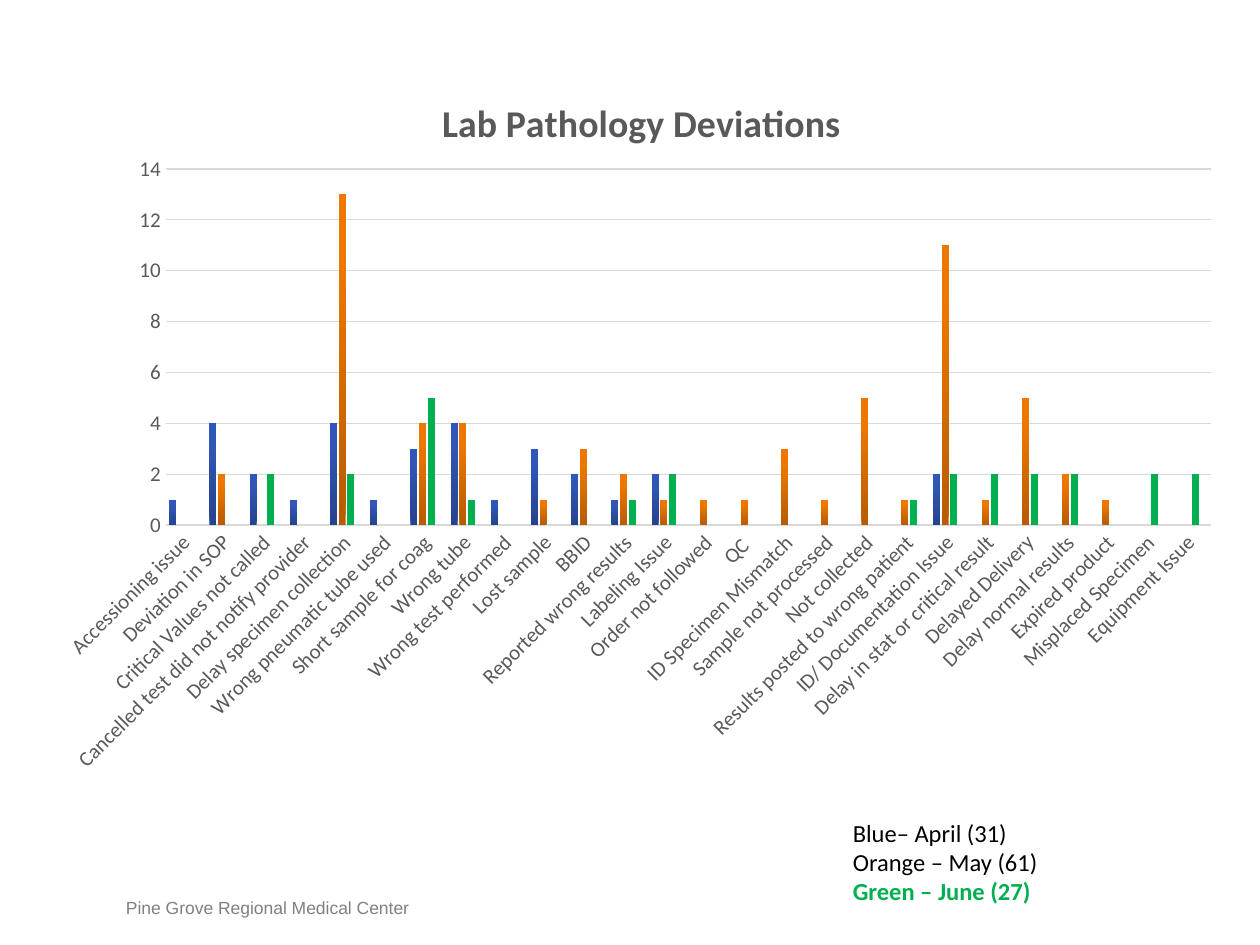
from pptx import Presentation
from pptx.chart.data import CategoryChartData
from pptx.dml.color import RGBColor
from pptx.enum import chart as ch, text
from pptx.oxml import parse_xml
from pptx.oxml.ns import nsdecls, qn
from pptx.util import Inches, Pt

COLORS = {"black": "000000", "green": "00B050", "footer": "808080",
          "label": "595959", "grid": "D9D9D9"}
TITLE = "Lab Pathology Deviations"
FOOTER = "Pine Grove Regional Medical Center"
KEY = [("Blue– April (31)", "black", False),
       ("Orange – May (61)", "black", False),
       ("Green – June (27)", "green", True)]
SERIES = ["Series 1", "Series 2", "Series 3", "Series 4"]
FILLS = [("25438D", "3057B7", "2E57BB"), ("B75C00", "ED7700", "EE7800"),
         ("00B050",), ("81621E", "A88027", "AB8125")]
STOPS = (0, 80, 100)
DEVIATIONS = [
    ("Accessioning issue", 1, None, None),
    ("Deviation in SOP", 4, 2, None),
    ("Critical Values not called", 2, None, 2),
    ("Cancelled test did not notify provider", 1, None, None),
    ("Delay specimen collection", 4, 13, 2),
    ("Wrong pneumatic tube used", 1, None, None),
    ("Short sample for coag", 3, 4, 5),
    ("Wrong tube", 4, 4, 1),
    ("Wrong test performed", 1, None, None),
    ("Lost sample", 3, 1, None),
    ("BBID", 2, 3, None),
    ("Reported wrong results", 1, 2, 1),
    ("Labeling Issue", 2, 1, 2),
    ("Order not followed", None, 1, None),
    ("QC ", None, 1, None),
    ("ID Specimen Mismatch", None, 3, None),
    ("Sample not processed", None, 1, None),
    ("Not collected", None, 5, None),
    ("Results posted to wrong patient", None, 1, 1),
    ("ID/ Documentation Issue", 2, 11, 2),
    ("Delay in stat or critical result", None, 1, 2),
    ("Delayed Delivery", None, 5, 2),
    ("Delay normal results", None, 2, 2),
    ("Expired product", None, 1, None),
    ("Misplaced Specimen", None, None, 2),
    ("Equipment Issue", None, None, 2),
]


def rgb(name):
    return RGBColor.from_string(COLORS[name])


def style(font, size, color, name="Calibri", bold=False):
    font.size, font.name, font.bold = Pt(size), name, bold
    font.color.rgb = rgb(color)


def add_text(p, value, **fmt):
    r = p.add_run()
    r.text = value
    style(r.font, **fmt)


def add_box(slide, x, y, w, h):
    tf = slide.shapes.add_textbox(Inches(x), Inches(y), Inches(w), Inches(h)).text_frame
    tf.word_wrap = True
    return tf


def set_layout(parent, index, **fractions):
    for old in parent.findall(qn("c:layout")):
        parent.remove(old)
    modes = "".join(f'<c:{axis}Mode val="edge"/>' for axis in "xy")
    sizes = "".join(f'<c:{k} val="{v}"/>' for k, v in fractions.items())
    target = '<c:layoutTarget val="inner"/>' if "w" in fractions else ""
    parent.insert(index, parse_xml(
        f'<c:layout {nsdecls("c")}><c:manualLayout>{target}{modes}{sizes}'
        '</c:manualLayout></c:layout>'))


def fill_series(series, colors):
    if len(colors) == 1:
        series.format.fill.solid()
        series.format.fill.fore_color.rgb = RGBColor.from_string(colors[0])
        return
    stops = "".join(f'<a:gs pos="{pos * 1000}"><a:srgbClr val="{c}"/></a:gs>'
                    for pos, c in zip(STOPS, colors))
    series._element.get_or_add_spPr().insert(0, parse_xml(
        f'<a:gradFill {nsdecls("a")} rotWithShape="1"><a:gsLst>{stops}</a:gsLst>'
        '<a:lin ang="16200000" scaled="0"/></a:gradFill>'))


def add_deviation_chart(slide):
    data = CategoryChartData()
    data.categories = [row[0] for row in DEVIATIONS]
    for i, name in enumerate(SERIES, 1):
        data.add_series(name, [row[i] if i < len(row) else None for row in DEVIATIONS])
    chart = slide.shapes.add_chart(ch.XL_CHART_TYPE.COLUMN_CLUSTERED, Inches(0.33),
                                   Inches(0.42), Inches(9.47), Inches(5.83), data).chart
    style(chart.font, 10, "black")
    chart.has_legend = False
    chart.has_title = True
    title = chart.chart_title
    add_text(title.text_frame.paragraphs[0], TITLE, size=21.6, color="label", bold=True)
    set_layout(title._element, 1, x=0.33, y=0.05)
    set_layout(chart._chartSpace.chart.plotArea, 0, x=0.104, y=0.158, w=0.876, h=0.485)

    plot = chart.plots[0]
    plot.gap_width, plot.overlap, plot.vary_by_categories = 100, -24, False
    for series, colors in zip(plot.series, FILLS):
        fill_series(series, colors)

    cat, val = chart.category_axis, chart.value_axis
    for axis in (cat, val):
        style(axis.tick_labels.font, 12, "label")
        axis.major_tick_mark = axis.minor_tick_mark = ch.XL_TICK_MARK.NONE
    cat.format.line.color.rgb = rgb("grid")
    cat.format.line.width = Pt(1)
    cat._element.txPr.bodyPr.set("rot", "-2700000")
    val.minimum_scale, val.maximum_scale, val.major_unit = 0, 14, 2
    val.format.line.fill.background()
    val.major_gridlines.format.line.color.rgb = rgb("grid")
    val.major_gridlines.format.line.width = Pt(0.75)


def main():
    prs = Presentation()
    prs.slide_width, prs.slide_height = Inches(10), Inches(7.5)
    s = prs.slides.add_slide(prs.slide_layouts[6])

    tf = add_box(s, 1, 7.12, 3.17, 0.17)
    tf.margin_left = tf.margin_right = tf.margin_top = tf.margin_bottom = 0
    tf.vertical_anchor = text.MSO_ANCHOR.BOTTOM
    add_text(tf.paragraphs[0], FOOTER, size=10, color="footer", name="Arial")

    tf = add_box(s, 6.67, 6.44, 2.67, 1.04)
    for i, (line, color, bold) in enumerate(KEY):
        p = tf.add_paragraph() if i else tf.paragraphs[0]
        add_text(p, line, size=14, color=color, bold=bold)

    add_deviation_chart(s)
    prs.save("out.pptx")


if __name__ == "__main__":
    main()
